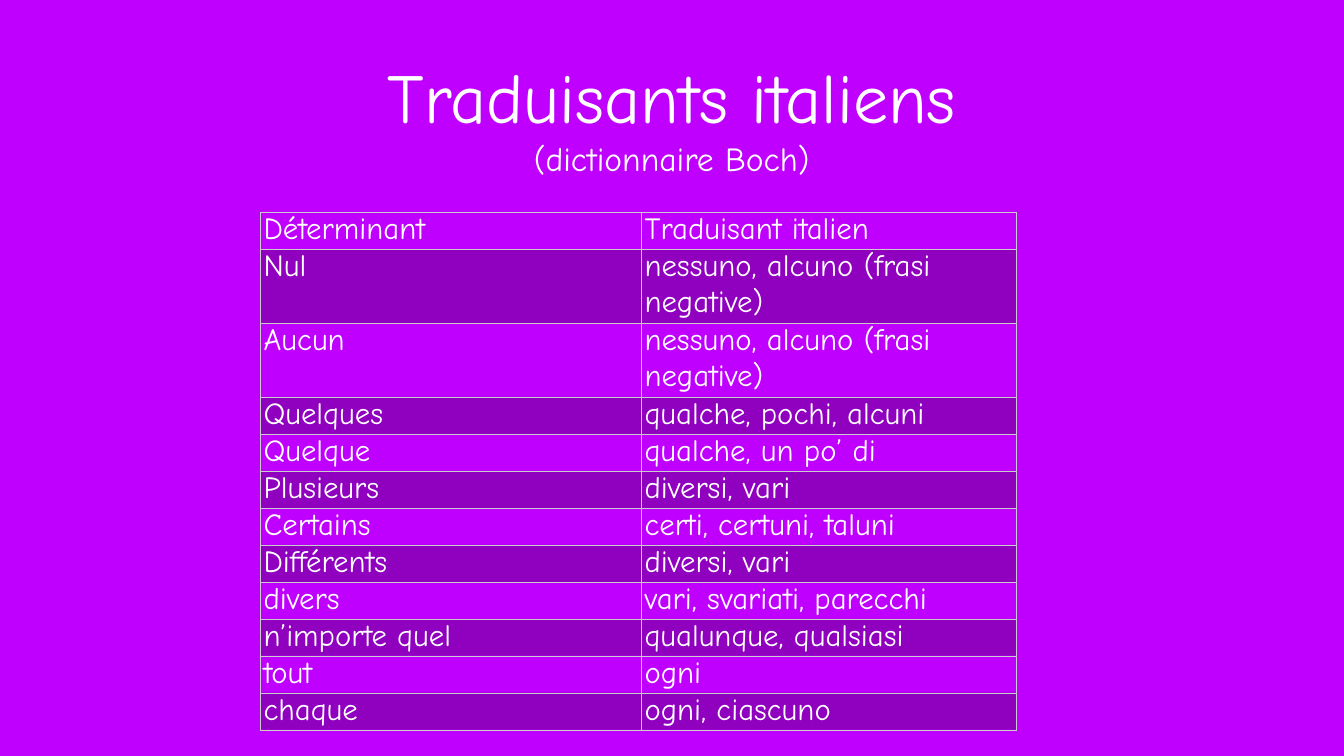
from lxml.etree import SubElement
from pptx import Presentation
from pptx.dml.color import RGBColor
from pptx.enum.text import MSO_ANCHOR, PP_ALIGN
from pptx.oxml.ns import qn
from pptx.util import Inches, Pt

FONT = "Comic Neue"
COLORS = {"background": "BF00FF", "text": "FFFFFF", "border": "CBCBCB", "band": "000000"}
BAND_OPACITY = 25
TITLE_LINES = [("Traduisants italiens", 100), ("(dictionnaire Boch)", 48)]
COLUMN_WIDTHS = [7.56, 7.45]
ROW_HEIGHT = 0.72
TRANSLATIONS = [
    ("Déterminant", "Traduisant italien"),
    ("Nul", "nessuno, alcuno (frasi negative)"),
    ("Aucun", "nessuno, alcuno (frasi negative)"),
    ("Quelques", "qualche, pochi, alcuni"),
    ("Quelque", "qualche, un po’ di"),
    ("Plusieurs", "diversi, vari"),
    ("Certains", "certi, certuni, taluni"),
    ("Différents", "diversi, vari"),
    ("divers", "vari, svariati, parecchi"),
    ("n’importe quel", "qualunque, qualsiasi"),
    ("tout", "ogni"),
    ("chaque", "ogni, ciascuno"),
]


def color(name):
    return RGBColor.from_string(COLORS[name])


def write(paragraph, text, size):
    paragraph.text = text
    font = paragraph.runs[0].font
    font.name, font.size, font.bold = FONT, Pt(size), False
    font.color.rgb = color("text")


def add_title(slide):
    title = slide.shapes.add_textbox(Inches(1.94), Inches(0.39), Inches(22.78), Inches(3.82))
    frame = title.text_frame
    frame.word_wrap = True
    frame.vertical_anchor = MSO_ANCHOR.MIDDLE
    frame.margin_left = frame.margin_right = Inches(0.06)
    frame.margin_top = frame.margin_bottom = Inches(0.06)
    for index, (text, size) in enumerate(TITLE_LINES):
        paragraph = frame.add_paragraph() if index else frame.paragraphs[0]
        write(paragraph, text, size)
        paragraph.alignment = PP_ALIGN.CENTER


def add_borders(cell):
    properties = cell._tc.get_or_add_tcPr()
    for side in ("lnL", "lnR", "lnT", "lnB"):
        line = SubElement(properties, qn(f"a:{side}"), w=str(Pt(0.5)))
        fill = SubElement(line, qn("a:solidFill"))
        SubElement(fill, qn("a:srgbClr"), val=COLORS["border"])


def fill_cell(cell, banded):
    """Give a banded cell a translucent dark fill, any other cell none."""
    if not banded:
        cell.fill.background()
        return
    cell.fill.solid()
    cell.fill.fore_color.rgb = color("band")
    tint = cell._tc.tcPr.find(qn("a:solidFill")).find(qn("a:srgbClr"))
    SubElement(tint, qn("a:alpha"), val=str(BAND_OPACITY * 1000))


def add_translations(slide):
    table = slide.shapes.add_table(
        len(TRANSLATIONS), len(COLUMN_WIDTHS), Inches(5.16), Inches(4.21),
        Inches(sum(COLUMN_WIDTHS)), Inches(ROW_HEIGHT * len(TRANSLATIONS))).table
    for column, width in zip(table.columns, COLUMN_WIDTHS):
        column.width = Inches(width)
    for row_index, (row, texts) in enumerate(zip(table.rows, TRANSLATIONS)):
        row.height = Inches(ROW_HEIGHT)
        for cell, text in zip(row.cells, texts):
            cell.margin_left = cell.margin_right = Inches(0.07)
            cell.margin_top = cell.margin_bottom = 0
            write(cell.text_frame.paragraphs[0], text, 44)
            add_borders(cell)
            fill_cell(cell, banded=row_index % 2 == 1)


def main():
    presentation = Presentation()
    presentation.slide_width = Inches(26.67)
    presentation.slide_height = Inches(15)
    slide = presentation.slides.add_slide(presentation.slide_layouts[6])
    slide.background.fill.solid()
    slide.background.fill.fore_color.rgb = color("background")
    add_title(slide)
    add_translations(slide)
    presentation.save("out.pptx")


if __name__ == "__main__":
    main()
